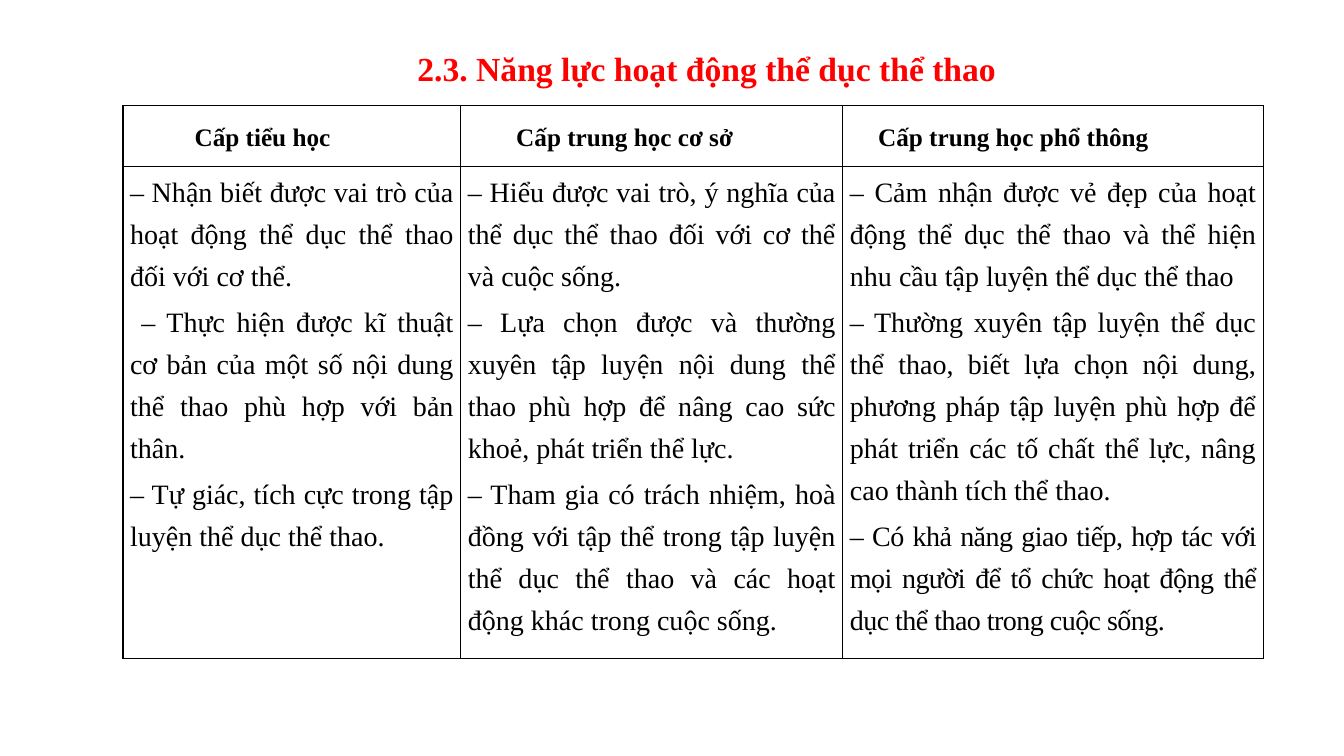
from dataclasses import dataclass

from lxml import etree
from pptx import Presentation
from pptx.dml.color import RGBColor
from pptx.enum.text import MSO_ANCHOR, MSO_AUTO_SIZE, PP_ALIGN
from pptx.oxml.ns import qn
from pptx.util import Inches, Pt

TOP, MIDDLE = MSO_ANCHOR.TOP, MSO_ANCHOR.MIDDLE
LEFT, JUSTIFY = PP_ALIGN.LEFT, PP_ALIGN.JUSTIFY
NO_AUTOFIT = MSO_AUTO_SIZE.NONE
TITLE_ONLY = 5


@dataclass(frozen=True)
class Theme:
    font: str = "Times New Roman"
    title_color: str = "FF0000"
    text_color: str = "000000"
    border_color: str = "000000"
    title_size: int = 24
    header_size: int = 18
    body_size: int = 20
    border_width: int = 1


TITLE = "2.3. Năng lực hoạt động thể dục thể thao"

LEVELS = [
    ("Cấp tiểu học", 3.35, 0.71, [
        "– Nhận biết được vai trò của hoạt động thể dục thể thao đối với cơ thể.",
        " – Thực hiện được kĩ thuật cơ bản của một số nội dung thể thao phù hợp với bản thân.",
        "– Tự giác, tích cực trong tập luyện thể dục thể thao.",
    ]),
    ("Cấp trung học cơ sở", 3.79, 0.55, [
        "– Hiểu được vai trò, ý nghĩa của thể dục thể thao đối với cơ thể và cuộc sống.",
        "– Lựa chọn được và thường xuyên tập luyện nội dung thể thao phù hợp để nâng cao sức khoẻ, phát triển thể lực.",
        "– Tham gia có trách nhiệm, hoà đồng với tập thể trong tập luyện thể dục thể thao và các hoạt động khác trong cuộc sống.",
    ]),
    ("Cấp trung học phổ thông", 4.17, 0.35, [
        "– Cảm nhận được vẻ đẹp của hoạt động thể dục thể thao và thể hiện nhu cầu tập luyện thể dục thể thao",
        "– Thường xuyên tập luyện thể dục thể thao, biết lựa chọn nội dung, phương pháp tập luyện phù hợp để phát triển các tố chất thể lực, nâng cao thành tích thể thao.",
        "– Có khả năng giao tiếp, hợp tác với mọi người để tổ chức hoạt động thể dục thể thao trong cuộc sống.",
    ]),
]
CONDENSED = LEVELS[-1][3][-1]
ROW_HEIGHTS = [0.6, 4.88]


def apply(target, values):
    for name, value in values.items():
        setattr(target, name, value)


class SlideBuilder:
    def __init__(self, slide, theme):
        self.slide = slide
        self.theme = theme

    def fill_paragraph(self, paragraph, text, size, color, bold, layout, indents, spacing=0):
        apply(paragraph, layout)
        properties = paragraph._p.get_or_add_pPr()
        for name, inches in indents.items():
            properties.set(name, str(Inches(inches)))
        run = paragraph.add_run()
        run.text = text
        apply(run.font, {"name": self.theme.font, "size": Pt(size), "bold": bold})
        run.font.color.rgb = RGBColor.from_string(color)
        if spacing:
            run._r.get_or_add_rPr().set("spc", str(round(spacing * 100)))

    def title(self, text, left, top, width, height):
        heading = self.slide.shapes.title
        apply(heading, {"left": Inches(left), "top": Inches(top),
                        "width": Inches(width), "height": Inches(height)})
        apply(heading.text_frame, {"word_wrap": True, "vertical_anchor": TOP,
                                   "auto_size": NO_AUTOFIT})
        self.fill_paragraph(heading.text_frame.paragraphs[0], text, self.theme.title_size,
                            self.theme.title_color, True, {"alignment": JUSTIFY},
                            {"marL": 0, "indent": 0.56})

    def border(self, cell):
        properties = cell._tc.get_or_add_tcPr()
        for position, side in enumerate(("a:lnL", "a:lnR", "a:lnT", "a:lnB")):
            line = etree.Element(qn(side), w=str(Pt(self.theme.border_width)))
            fill = etree.SubElement(line, qn("a:solidFill"))
            etree.SubElement(fill, qn("a:srgbClr"), val=self.theme.border_color)
            properties.insert(position, line)

    def cell(self, cell, anchor):
        apply(cell, {"vertical_anchor": anchor, "margin_left": 0, "margin_right": 0,
                     "margin_top": 0, "margin_bottom": 0})
        cell.fill.background()
        self.border(cell)
        return cell.text_frame

    def header_cell(self, cell, text, indent):
        frame = self.cell(cell, MIDDLE)
        self.fill_paragraph(frame.paragraphs[0], text, self.theme.header_size,
                            self.theme.text_color, True,
                            {"alignment": LEFT, "line_spacing": 1.15},
                            {"marL": indent, "indent": 0})

    def body_cell(self, cell, statements):
        frame = self.cell(cell, TOP)
        layout = {"alignment": JUSTIFY, "line_spacing": Pt(30), "space_before": Pt(3)}
        for index, statement in enumerate(statements):
            paragraph = frame.add_paragraph() if index else frame.paragraphs[0]
            self.fill_paragraph(paragraph, statement, self.theme.body_size,
                                self.theme.text_color, False, layout,
                                {"marL": 0.07, "marR": 0.07, "indent": 0},
                                -0.4 if statement == CONDENSED else 0)

    def level_table(self, levels, left, top):
        width = sum(level[1] for level in levels)
        table = self.slide.shapes.add_table(
            len(ROW_HEIGHTS), len(levels), Inches(left), Inches(top),
            Inches(width), Inches(sum(ROW_HEIGHTS))).table
        apply(table, {"first_row": False, "horz_banding": False})
        for row, height in zip(table.rows, ROW_HEIGHTS):
            row.height = Inches(height)
        for column, (name, column_width, indent, statements) in enumerate(levels):
            table.columns[column].width = Inches(column_width)
            self.header_cell(table.cell(0, column), name, indent)
            self.body_cell(table.cell(1, column), statements)


def main():
    presentation = Presentation()
    apply(presentation, {"slide_width": Inches(13.33), "slide_height": Inches(7.5)})
    slide = presentation.slides.add_slide(presentation.slide_layouts[TITLE_ONLY])
    builder = SlideBuilder(slide, Theme())
    builder.title(TITLE, 3.48, 0.43, 9.56, 0.5)
    builder.level_table(LEVELS, 1.22, 1.05)
    presentation.save("out.pptx")


if __name__ == "__main__":
    main()
